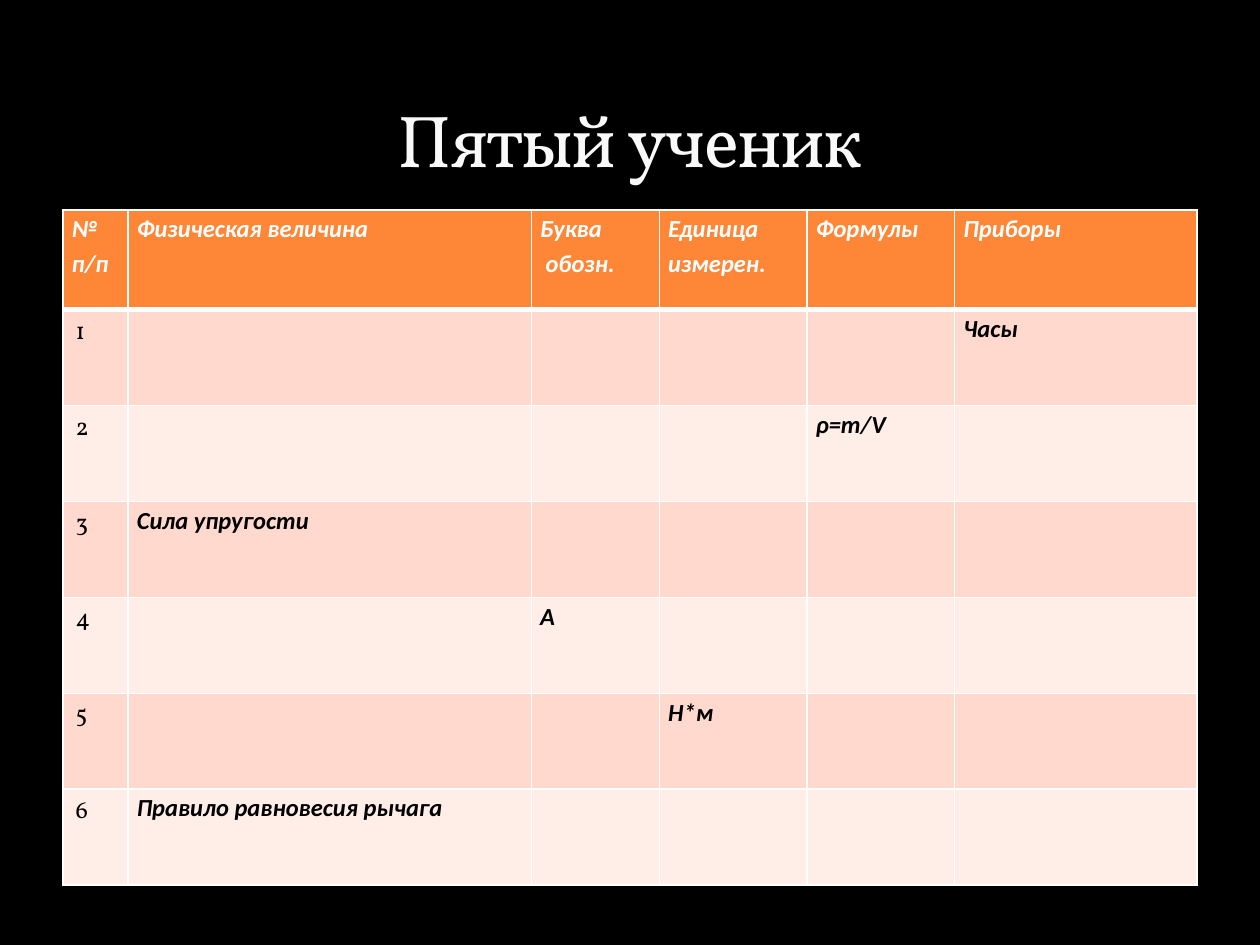
from lxml import etree
from pptx import Presentation
from pptx.dml.color import RGBColor
from pptx.enum.text import MSO_ANCHOR, PP_ALIGN
from pptx.oxml.ns import qn
from pptx.util import Pt

BOTTOM = MSO_ANCHOR.BOTTOM
CENTER = PP_ALIGN.CENTER

BLACK = RGBColor(0x00, 0x00, 0x00)
WHITE = RGBColor(0xFF, 0xFF, 0xFF)
TITLE_WHITE = RGBColor(0xF9, 0xF9, 0xF9)
ORANGE = RGBColor(0xFE, 0x86, 0x37)
BANDS = (RGBColor(0xFF, 0xD9, 0xCE), RGBColor(0xFF, 0xED, 0xE8))

SERIF = "Vollkorn"
SANS = "Calibri"

HEADERS = ("№ п/п", "Физическая величина", "Буква\n обозн.",
           "Единица измерен.", "Формулы", "Приборы")
CLUES = ((5, "Часы"), (4, "ρ=m/V"), (1, "Сила упругости"),
         (2, "A"), (3, "Н*м"), (1, "Правило равновесия рычага"))
COLUMN_WIDTHS = (37.2, 230.4, 73.2, 84.4, 84.4, 138.4)
HEADER_HEIGHT = 57
ROW_HEIGHT = 54.8


def add_run(paragraph, text, font_name, size, color, emphasis=False):
    run = paragraph.add_run()
    run.text = text
    run.font.name = font_name
    run.font.size = Pt(size)
    run.font.color.rgb = color
    run.font.bold = run.font.italic = emphasis
    return run


def add_title(slide, text):
    title = slide.shapes.title
    title.left, title.top, title.width, title.height = Pt(36), Pt(12), Pt(648), Pt(96)
    title.text_frame.vertical_anchor = BOTTOM
    paragraph = title.text_frame.paragraphs[0]
    paragraph.alignment = CENTER
    run = add_run(paragraph, text, SERIF, 42, TITLE_WHITE)
    run.font._element.set("spc", "-100")


def style_cell(cell, fill_color, top=1, bottom=1):
    properties = cell._tc.get_or_add_tcPr()
    for side, width in (("L", 1), ("R", 1), ("T", top), ("B", bottom)):
        border = etree.SubElement(properties, qn(f"a:ln{side}"), w=str(Pt(width)))
        solid = etree.SubElement(border, qn("a:solidFill"))
        etree.SubElement(solid, qn("a:srgbClr"), val=str(WHITE))
    cell.fill.solid()
    cell.fill.fore_color.rgb = fill_color


def write_label(cell, text, color):
    cell.margin_left = cell.margin_right = Pt(5)
    cell.margin_top = cell.margin_bottom = 0
    frame = cell.text_frame
    for index, line in enumerate(text.split("\n")):
        paragraph = frame.add_paragraph() if index else frame.paragraphs[0]
        paragraph.line_spacing = 1.15
        add_run(paragraph, line, SANS, 14, color, emphasis=True)


def add_quiz_table(slide):
    table = slide.shapes.add_table(
        len(CLUES) + 1, len(HEADERS), Pt(36), Pt(120), Pt(648),
        Pt(HEADER_HEIGHT + ROW_HEIGHT * len(CLUES))).table
    for column, width in zip(table.columns, COLUMN_WIDTHS):
        column.width = Pt(width)
    for row in table.rows:
        row.height = Pt(ROW_HEIGHT)
    table.rows[0].height = Pt(HEADER_HEIGHT)

    for column, header in enumerate(HEADERS):
        cell = table.cell(0, column)
        style_cell(cell, ORANGE, bottom=3)
        write_label(cell, header, WHITE)

    for number, (clue_column, clue) in enumerate(CLUES, start=1):
        for column in range(len(HEADERS)):
            style_cell(table.cell(number, column), BANDS[(number - 1) % 2],
                       top=3 if number == 1 else 1)
        number_line = table.cell(number, 0).text_frame.paragraphs[0]
        add_run(number_line, str(number), SERIF, 14, BLACK)
        write_label(table.cell(number, clue_column), clue, BLACK)


def main():
    deck = Presentation()
    deck.slide_width, deck.slide_height = Pt(720), Pt(540)
    slide = deck.slides.add_slide(deck.slide_layouts[5])
    slide.background.fill.solid()
    slide.background.fill.fore_color.rgb = BLACK
    add_quiz_table(slide)
    add_title(slide, "Пятый ученик")
    deck.save("out.pptx")


if __name__ == "__main__":
    main()
